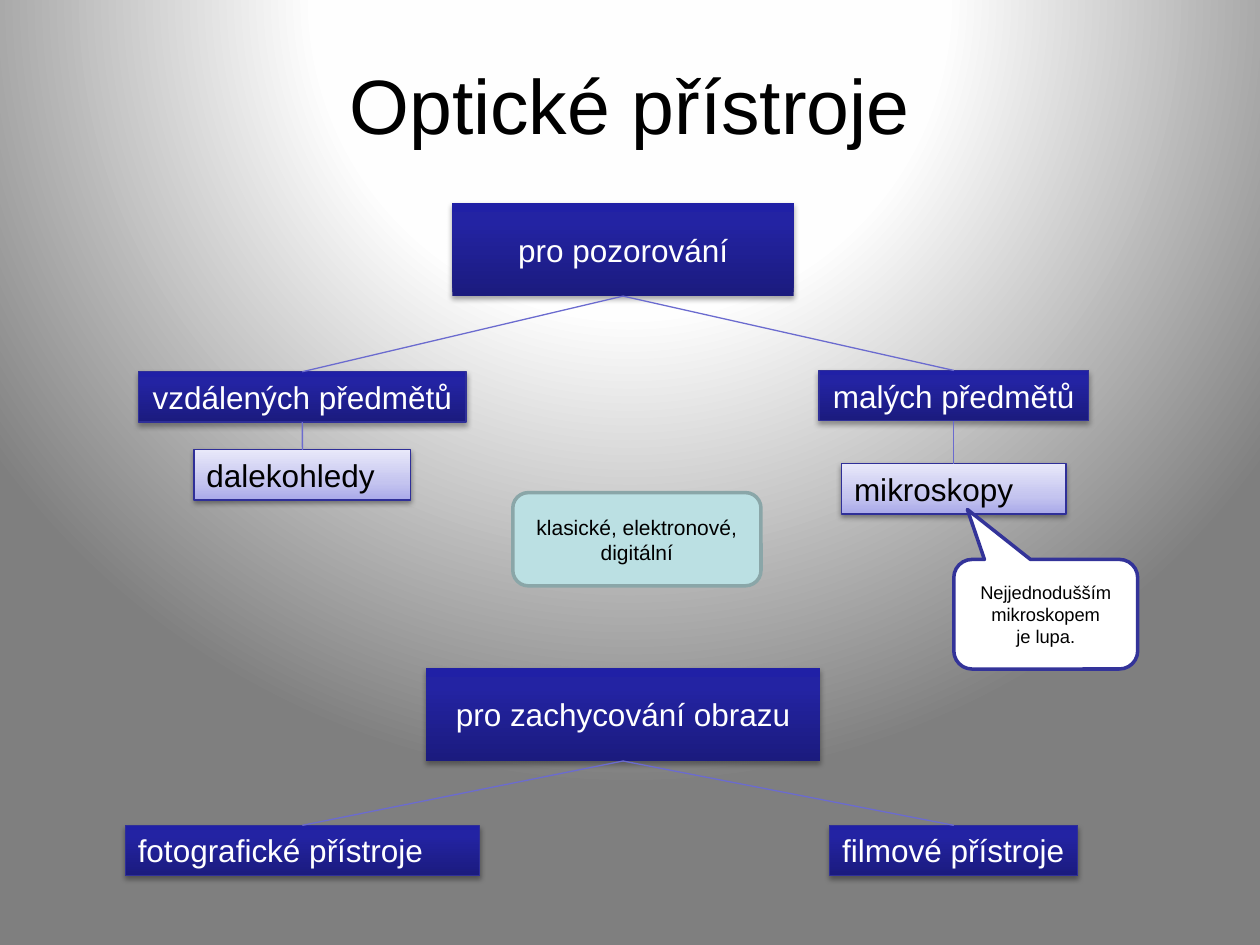
from lxml import etree
from pptx import Presentation, util as u
from pptx.dml.color import RGBColor
from pptx.enum import shapes, text
from pptx.oxml.ns import qn

THEME = {
    "font": "Arial",
    "title_size": 44, "box_size": 18, "note_size": 12, "callout_size": 10.5,
    "black": "000000", "white": "FFFFFF", "connector": "6B6BCF",
    "background": [(0, "FFFFFF"), (40, "FEFEFE"), (100, "7F7F7F")],
    "dark": {"stops": [(0, "1B1B7E"), (80, "2323A3"), (100, "2020A6")],
             "color": "FFFFFF", "shadow": (35, 1.8)},
    "light": {"stops": [(0, "A9A9E9"), (35, "C4C4EF"), (100, "E8E8FA")],
              "color": "000000", "shadow": (38, 1.6)},
    "box_line": "2F2F98",
    "note_fill": "BBE0E3", "note_line": "8AA6A8", "callout_line": "333399",
}

TITLE = "Optické přístroje"
LEFT, MIDDLE, RIGHT = 2.4, 4.945, 7.57
MAIN_HEIGHT, ITEM_HEIGHT = 0.74, 0.4

BOXES = {
    "observing": ("pro pozorování", MIDDLE, 1.61, 2.71, "main", "dark"),
    "distant": ("vzdálených předmětů", LEFT, 2.95, 2.6, "centred", "dark"),
    "small": ("malých předmětů", RIGHT, 2.94, 2.14, "centred", "dark"),
    "telescopes": ("dalekohledy", LEFT, 3.57, 1.72, "item", "light"),
    "microscopes": ("mikroskopy", RIGHT, 3.68, 1.78, "item", "light"),
    "capturing": ("pro zachycování obrazu", MIDDLE, 5.3, 3.13, "main", "dark"),
    "cameras": ("fotografické přístroje", LEFT, 6.55, 2.81, "item", "dark"),
    "film": ("filmové přístroje", RIGHT, 6.55, 1.97, "item", "dark"),
}

LINKS = [
    ("observing", "distant"), ("observing", "small"),
    ("distant", "telescopes"), ("small", "microscopes"),
    ("capturing", "cameras"), ("capturing", "film"),
]

NOTES = [
    (["klasické, elektronové, digitální"], (4.07, 3.91, 1.97, 0.74),
     shapes.MSO_SHAPE.ROUNDED_RECTANGLE, [], "note_fill", "note_line", "note_size"),
    (["Nejjednodušším mikroskopem", "je lupa."], (7.57, 4.44, 1.46, 0.87),
     shapes.MSO_SHAPE.ROUNDED_RECTANGULAR_CALLOUT, [-0.426, -0.956, 0.167],
     "white", "callout_line", "callout_size"),
]


def inches(lengths):
    return [u.Inches(length) for length in lengths]


def add_color(parent, color):
    return etree.SubElement(parent, qn("a:srgbClr"), val=color)


def set_gradient(fill, properties, stops, circle=False):
    fill.solid()
    gradient = etree.Element(qn("a:gradFill"), rotWithShape="1")
    stop_list = etree.SubElement(gradient, qn("a:gsLst"))
    for position, color in stops:
        stop = etree.SubElement(stop_list, qn("a:gs"), pos=str(position * 1000))
        add_color(stop, color)
    if circle:
        shade = etree.SubElement(gradient, qn("a:path"), path="circle")
        etree.SubElement(shade, qn("a:fillToRect"),
                         l="50000", t="-80000", r="50000", b="180000")
    else:
        etree.SubElement(gradient, qn("a:lin"), ang="16200000", scaled="0")
    properties.replace(properties.find(qn("a:solidFill")), gradient)


def add_shadow(shape, opacity, distance):
    effects = shape.element.spPr.find(qn("a:effectLst"))
    shadow = etree.SubElement(
        effects, qn("a:outerShdw"), blurRad=str(u.Pt(3.1)),
        dist=str(u.Pt(distance)), dir="5400000", rotWithShape="0")
    etree.SubElement(add_color(shadow, THEME["black"]), qn("a:alpha"),
                     val=str(opacity * 1000))


def set_line(line, color, width):
    line.color.rgb = RGBColor.from_string(color)
    line.width = u.Pt(width)


def write(shape, paragraphs, size, color, alignment=text.PP_ALIGN.CENTER, **frame_format):
    frame = shape.text_frame
    frame_values = {"word_wrap": True, "vertical_anchor": text.MSO_ANCHOR.MIDDLE}
    for name, value in {**frame_values, **frame_format}.items():
        setattr(frame, name, value)
    frame.text = "\n".join(paragraphs)
    font_values = {"name": THEME["font"], "size": u.Pt(size)}
    for paragraph in frame.paragraphs:
        paragraph.alignment = alignment
        font = paragraph.runs[0].font
        for name, value in font_values.items():
            setattr(font, name, value)
        font.color.rgb = RGBColor.from_string(color)


def add_box(slide, label, center, top, width, role, style_name):
    style = THEME[style_name]
    is_main = role == "main"
    height = MAIN_HEIGHT if is_main else ITEM_HEIGHT
    box = slide.shapes.add_shape(
        shapes.MSO_SHAPE.RECTANGLE, *inches([center - width / 2, top, width, height]))
    box.shadow.inherit = False
    set_gradient(box.fill, box.element.spPr, style["stops"])
    add_shadow(box, *style["shadow"])
    frame_format = {}
    if is_main:
        box.line.fill.background()
    else:
        set_line(box.line, THEME["box_line"], 0.75)
        frame_format = {"word_wrap": role == "item",
                        "vertical_anchor": text.MSO_ANCHOR.TOP,
                        "auto_size": text.MSO_AUTO_SIZE.SHAPE_TO_FIT_TEXT}
    alignment = text.PP_ALIGN.LEFT if role == "item" else text.PP_ALIGN.CENTER
    write(box, [label], THEME["box_size"], style["color"], alignment, **frame_format)
    return box


def add_link(slide, parent, child):
    link = slide.shapes.add_connector(shapes.MSO_CONNECTOR.STRAIGHT, 0, 0, 0, 0)
    link.begin_connect(parent, 2)
    link.end_connect(child, 0)
    set_line(link.line, THEME["connector"], 0.75)
    etree.SubElement(link.element.spPr, qn("a:effectLst"))


def add_note(slide, paragraphs, place, kind, adjustments, fill, line, size):
    note = slide.shapes.add_shape(kind, *inches(place))
    note.shadow.inherit = False
    for index, value in enumerate(adjustments):
        note.adjustments[index] = value
    note.fill.solid()
    note.fill.fore_color.rgb = RGBColor.from_string(THEME[fill])
    set_line(note.line, THEME[line], 2)
    write(note, paragraphs, THEME[size], THEME["black"])


def main():
    presentation = Presentation()
    presentation.slide_width, presentation.slide_height = inches([10, 7.5])
    slide = presentation.slides.add_slide(presentation.slide_layouts[6])
    background_fill = slide.background.fill
    background_fill.solid()
    background = slide.element.find(".//" + qn("p:bgPr"))
    set_gradient(background_fill, background, THEME["background"], circle=True)

    title = slide.shapes.add_textbox(*inches([0, 0.01, 10, 1.62]))
    write(title, [TITLE], THEME["title_size"], THEME["black"])
    boxes = {name: add_box(slide, *box) for name, box in BOXES.items()}
    for parent, child in LINKS:
        add_link(slide, boxes[parent], boxes[child])
    for note in NOTES:
        add_note(slide, *note)
    presentation.save("out.pptx")


if __name__ == "__main__":
    main()
